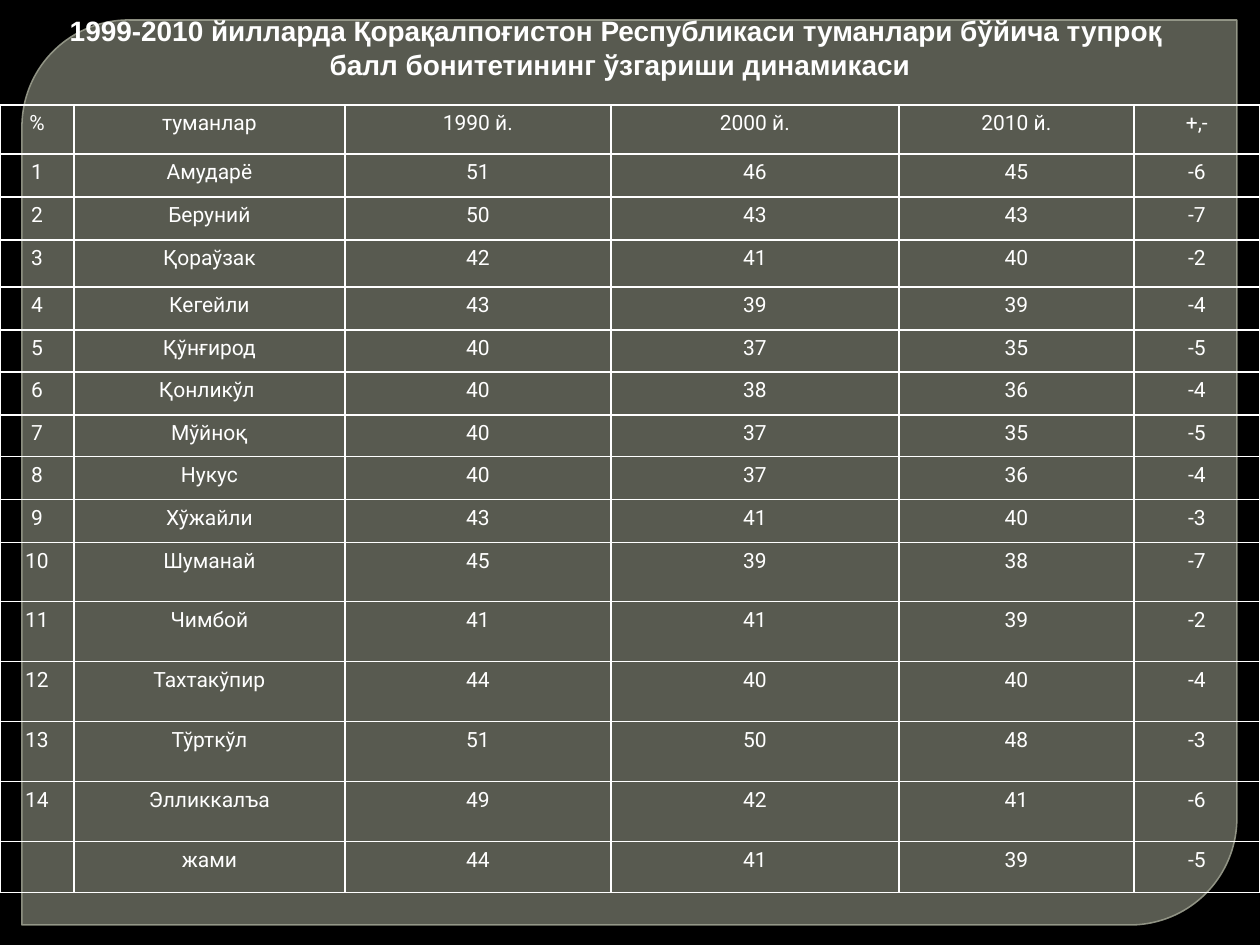
from dataclasses import dataclass
from typing import NamedTuple

from lxml import etree
from pptx import Presentation
from pptx import util as u
from pptx.dml.color import RGBColor
from pptx.enum import shapes, text
from pptx.oxml import ns

PX = u.Inches(1) // 126  # one px in EMU


@dataclass(frozen=True)
class Theme:
    back: str = "000000"
    panel: str = "888B7B"
    edge: str = "9DA090"
    ink: str = "FFFFFF"
    head_font: str = "Arial"
    cell_font: str = "Roboto"
    head_size: float = 16
    cell_size: float = 12
    edge_width: float = 0.87
    rule_width: float = 1


class Box(NamedTuple):
    left: int
    top: int
    width: int
    height: int

    def emu(self) -> list[int]:
        return [n * PX for n in self]


class Row(NamedTuple):
    name: str
    first: str
    mid: str
    last: str
    change: str
    height: int
    mark: str = ""


THEME = Theme()
PANEL = Box(22, 20, 1215, 905)
TITLE = Box(55, 6, 1130, 113)
TABLE = Box(0, 105, 1260, 787)
COLS = (74, 271, 266, 288, 235, 126)
LINES = (
    "1999-2010 йилларда Қорақалпоғистон Республикаси туманлари бўйича тупроқ ",
    "балл бонитетининг ўзгариши динамикаси",
)
HEAD = Row("туманлар", "1990 й.", "2000 й.", "2010 й.", "+,-", 49, "%")
TOTAL = Row("жами", "44", "41", "39", "-5", 50)
AREAS = (
    Row("Амударё", "51", "46", "45", "-6", 43),
    Row("Беруний", "50", "43", "43", "-7", 43),
    Row("Қораўзак", "42", "41", "40", "-2", 47),
    Row("Кегейли", "43", "39", "39", "-4", 43),
    Row("Қўнғирод", "40", "37", "35", "-5", 42),
    Row("Қонликўл ", "40", "38", "36", "-4", 43),
    Row("Мўйноқ", "40", "37", "35", "-5", 42),
    Row("Нукус", "40", "37", "36", "-4", 43),
    Row("Хўжайли", "43", "41", "40", "-3", 43),
    Row("Шуманай", "45", "39", "38", "-7", 59),
    Row("Чимбой", "41", "41", "39", "-2", 60),
    Row("Тахтакўпир", "44", "40", "40", "-4", 60),
    Row("Тўрткўл", "51", "50", "48", "-3", 60),
    Row("Элликкалъа", "49", "42", "41", "-6", 60),
)
HEAD_STYLE = {"name": THEME.head_font, "size": u.Pt(THEME.head_size), "bold": True}
CELL_STYLE = {"name": THEME.cell_font, "size": u.Pt(THEME.cell_size), "bold": False}


def write(para, words: str, style: dict) -> None:
    para.alignment = text.PP_ALIGN.CENTER
    if not words:
        return
    run = para.add_run()
    run.text = words
    for key, value in style.items():
        setattr(run.font, key, value)
    run.font.color.rgb = RGBColor.from_string(THEME.ink)


def fade(fill, color: str, share: int) -> None:
    """Give a solid fill a color and an opacity in percent."""
    fill.solid()
    fill.fore_color.rgb = RGBColor.from_string(color)


def set_alpha(part, share: int) -> None:
    node = part.find(ns.qn("a:solidFill"))[0]
    etree.SubElement(node, ns.qn("a:alpha"), val=str(share * 1000))


def draw_panel(slide) -> None:
    panel = slide.shapes.add_shape(
        shapes.MSO_SHAPE.ROUND_2_DIAG_RECTANGLE, *PANEL.emu())
    panel.shadow.inherit = False
    panel.adjustments[0] = 0.118
    panel.adjustments[1] = 0
    panel.line.width = u.Pt(THEME.edge_width)
    props = panel.element.spPr
    for fill, color, share in ((panel.fill, THEME.panel, 65),
                               (panel.line.fill, THEME.edge, 88)):
        fade(fill, color, share)
    set_alpha(props, 65)
    set_alpha(props.find(ns.qn("a:ln")), 88)


def rule_cell(cell) -> None:
    props = cell._tc.get_or_add_tcPr()
    for side in ("lnL", "lnR", "lnT", "lnB"):
        line = etree.SubElement(props, ns.qn(f"a:{side}"),
                                w=str(u.Pt(THEME.rule_width)))
        fill = etree.SubElement(line, ns.qn("a:solidFill"))
        etree.SubElement(fill, ns.qn("a:srgbClr"), val=THEME.ink)
    cell.fill.background()


def draw_table(slide, rows: list[Row]) -> None:
    table = slide.shapes.add_table(len(rows), len(COLS), *TABLE.emu()).table
    table.first_row = table.horz_banding = False
    for col, width in zip(table.columns, COLS):
        col.width = width * PX
    for i, row in enumerate(rows):
        table.rows[i].height = row.height * PX
        words = (row.mark, row.name, row.first, row.mid, row.last, row.change)
        for j, word in enumerate(words):
            cell = table.cell(i, j)
            rule_cell(cell)
            write(cell.text_frame.paragraphs[0], word, CELL_STYLE)


def draw_title(slide) -> None:
    frame = slide.shapes.add_textbox(*TITLE.emu()).text_frame
    form = {"word_wrap": False, "auto_size": text.MSO_AUTO_SIZE.NONE,
            "vertical_anchor": text.MSO_ANCHOR.TOP, "margin_top": 8 * PX}
    for key, value in form.items():
        setattr(frame, key, value)
    for i, line in enumerate(LINES):
        para = frame.add_paragraph() if i else frame.paragraphs[0]
        write(para, line, HEAD_STYLE)


def main() -> None:
    deck = Presentation()
    deck.slide_width, deck.slide_height = 1260 * PX, 945 * PX
    slide = deck.slides.add_slide(deck.slide_layouts[6])
    fade(slide.background.fill, THEME.back, 100)

    # Panel, then table, then title on top
    draw_panel(slide)
    areas = [row._replace(mark=str(n)) for n, row in enumerate(AREAS, 1)]
    draw_table(slide, [HEAD, *areas, TOTAL])
    draw_title(slide)
    deck.save("out.pptx")


if __name__ == "__main__":
    main()
